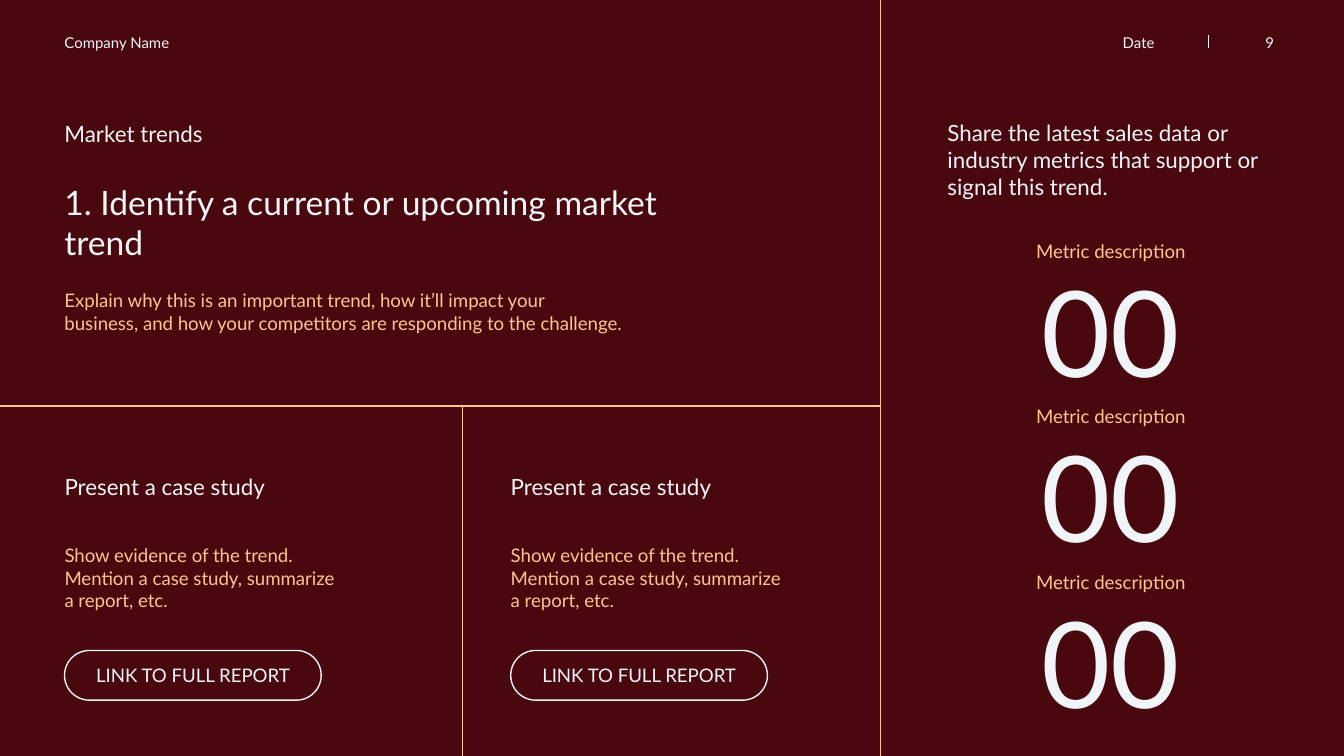
from lxml import etree
from pptx import Presentation
from pptx.dml.color import RGBColor
from pptx.enum.shapes import MSO_CONNECTOR, MSO_SHAPE
from pptx.enum.text import MSO_ANCHOR, PP_ALIGN
from pptx.oxml.ns import qn
from pptx.util import Inches, Pt

FONT = "Lato"
WINE = "49070E"
PALE = "F1F5F8"
PEACH = "FFC490"
WIDTH = 10
HEIGHT = WIDTH * 9 / 16
MARGIN = 0.48
PANEL_LEFT, BAND_TOP, CASE_SPLIT = 6.55, 3.02, 3.44


def color(value):
    return RGBColor.from_string(value)


def write(frame, lines, size, tint, align=PP_ALIGN.LEFT, spacing=1.0):
    for index, line in enumerate(lines):
        para = frame.paragraphs[0] if index == 0 else frame.add_paragraph()
        para.alignment = align
        para.line_spacing = spacing
        for part, words in enumerate(line.split("\n")):
            if part:
                para.add_line_break()
            span = para.add_run()
            span.text = words
            span.font.name = FONT
            span.font.size = Pt(size)
            span.font.color.rgb = color(tint)


def set_insets(frame, inset):
    frame.margin_left = frame.margin_right = Inches(inset)
    frame.margin_top = frame.margin_bottom = Inches(inset)


def add_text(page, left, top, width, height, lines, size, tint=PALE, **layout):
    box = page.shapes.add_textbox(Inches(left), Inches(top), Inches(width), Inches(height))
    frame = box.text_frame
    frame.word_wrap = True
    set_insets(frame, 0)
    write(frame, lines, size, tint, **layout)


def add_rule(page, left, top, right, bottom, tint=PEACH):
    rule = page.shapes.add_connector(
        MSO_CONNECTOR.STRAIGHT, Inches(left), Inches(top), Inches(right), Inches(bottom))
    rule.line.color.rgb = color(tint)
    rule.line.width = Pt(0.75)
    properties = rule.element.find(qn("p:spPr"))
    etree.SubElement(properties, qn("a:effectLst"))


def add_button(page, left, top, width, height, label):
    button = page.shapes.add_shape(
        MSO_SHAPE.ROUNDED_RECTANGLE, Inches(left), Inches(top), Inches(width), Inches(height))
    button.adjustments[0] = 0.5
    button.shadow.inherit = False
    button.fill.background()
    button.line.color.rgb = color(PALE)
    button.line.width = Pt(0.75)
    frame = button.text_frame
    frame.word_wrap = True
    frame.vertical_anchor = MSO_ANCHOR.MIDDLE
    set_insets(frame, 0.1)
    write(frame, [label], 10, PALE, align=PP_ALIGN.CENTER)


def add_header(page, left, top, width):
    right = left + width
    add_text(page, left, top, 2.07, 0.25, ["Company Name"], 8)
    add_text(page, right - 2.04, top, 1.15, 0.16, ["Date"], 8, align=PP_ALIGN.RIGHT)
    add_rule(page, right - 0.49, top + 0.01, right - 0.49, top + 0.11, PALE)
    add_text(page, right - 0.42, top, 0.42, 0.25, ["9"], 8, align=PP_ALIGN.RIGHT)


def add_trend(page, left, top, width):
    add_text(page, left, top, width, 0.28, ["Market trends"], 12)
    add_text(page, left, top + 0.46, width, 0.61,
             ["1. Identify a current or upcoming market trend"], 18)
    add_text(page, left, top + 1.26, width, 0.88, [
        "Explain why this is an important trend, how it’ll impact your",
        "business, and how your competitors are responding to the challenge.",
    ], 10, PEACH)


def add_case_study(page, left, top, width):
    add_text(page, left, top, width, 0.28, ["Present a case study"], 12)
    add_text(page, left, top + 0.53, width, 0.61, [
        "Show evidence of the trend.",
        "Mention a case study, summarize\na report, etc.",
    ], 10, PEACH)
    add_button(page, left, top + 1.32, 1.91, 0.37, "LINK TO FULL REPORT")


def add_metric(page, left, top, width):
    add_text(page, left, top, width, 0.15, ["Metric description"], 10, PEACH,
             align=PP_ALIGN.CENTER, spacing=1.15)
    add_text(page, left, top + 0.16, width, 0.91, ["00"], 64, align=PP_ALIGN.CENTER)


def add_metrics_panel(page, left, top, width):
    add_text(page, left, top, width, 0.27,
             ["Share the latest sales data or industry metrics that support or signal this trend."], 12)
    for index in range(3):
        add_metric(page, left + 0.28, top + 0.87 + index * 1.23, 1.87)


def add_dividers(page):
    add_rule(page, PANEL_LEFT, -0.01, PANEL_LEFT, 5.63)
    add_rule(page, 0, BAND_TOP, PANEL_LEFT, BAND_TOP)
    add_rule(page, CASE_SPLIT, BAND_TOP, CASE_SPLIT, 5.68)


def main():
    deck = Presentation()
    deck.slide_width = Inches(WIDTH)
    deck.slide_height = Inches(HEIGHT)
    page = deck.slides.add_slide(deck.slide_layouts[6])
    page.background.fill.solid()
    page.background.fill.fore_color.rgb = color(WINE)

    add_header(page, MARGIN, 0.25, 9)
    add_trend(page, MARGIN, 0.89, 4.57)
    for left in (MARGIN, 3.8):
        add_case_study(page, left, 3.52, 2.39)
    add_metrics_panel(page, 7.05, 0.89, 2.43)
    add_dividers(page)
    deck.save("out.pptx")


if __name__ == "__main__":
    main()
